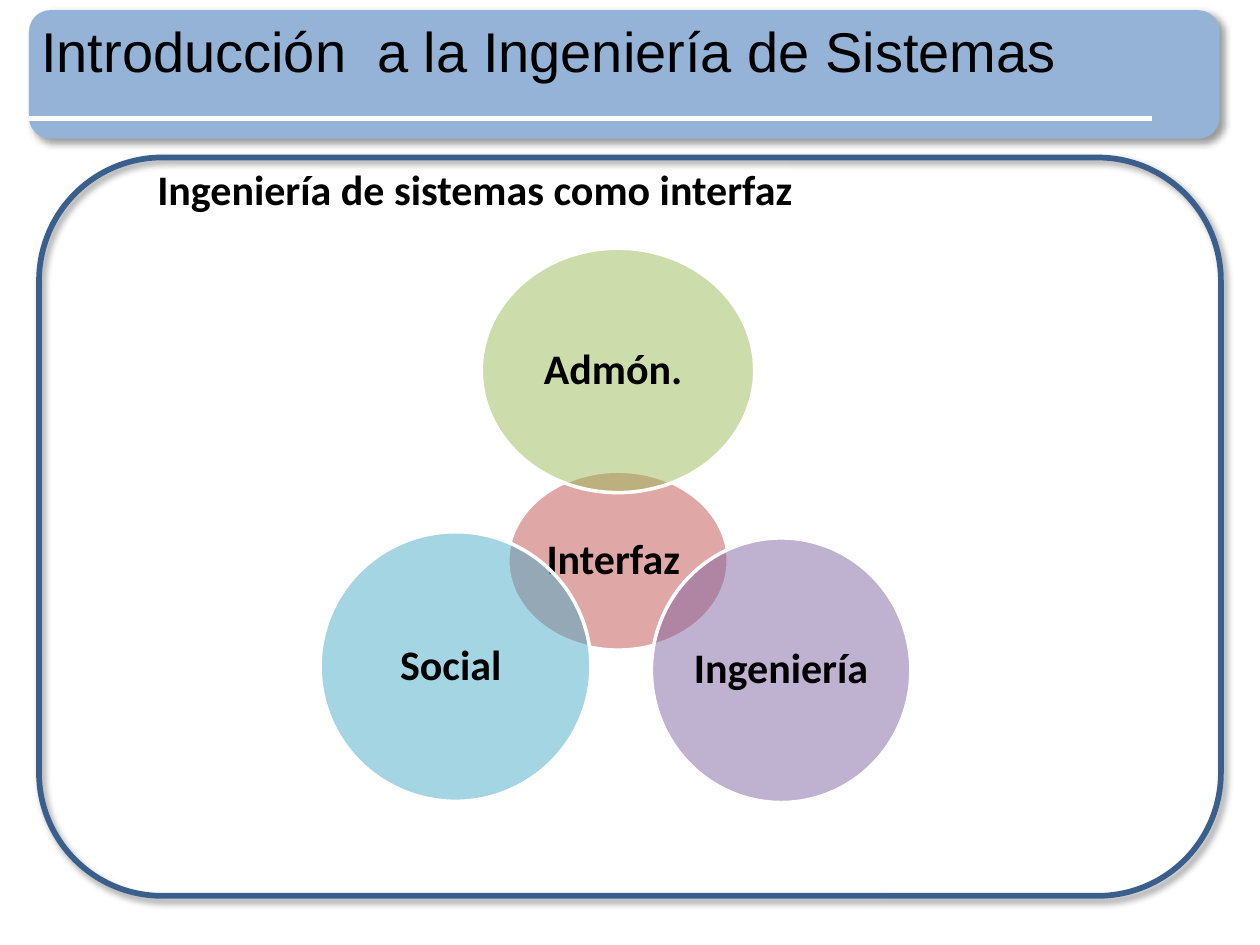
from lxml import etree
from pptx import Presentation
from pptx import util as u
from pptx.dml.color import RGBColor
from pptx.enum import shapes, text
from pptx.oxml import ns

BLACK = RGBColor(0x00, 0x00, 0x00)
WHITE = RGBColor(0xFF, 0xFF, 0xFF)
BAND = RGBColor(0x95, 0xB3, 0xD7)
EDGE = RGBColor(0x3A, 0x5F, 0x8C)
RED = RGBColor(0xC0, 0x50, 0x4D)
GREEN = RGBColor(0x9B, 0xBB, 0x59)
PURPLE = RGBColor(0x80, 0x64, 0xA2)
AQUA = RGBColor(0x4B, 0xAC, 0xC6)

deck = Presentation()
deck.slide_width, deck.slide_height = u.Inches(10), u.Inches(7.5)
slide = deck.slides.add_slide(deck.slide_layouts[6])
parts = slide.shapes


def area(*box):
    """Turn left, top, width, height in percent of the slide into lengths."""
    sides = (deck.slide_width, deck.slide_height) * 2
    return [round(share * side / 100) for share, side in zip(box, sides)]


def write(frame, words, size, face, bold, form):
    """Fill a text frame with one paragraph; form holds frame settings."""
    frame.word_wrap = True
    for key, val in form.items():
        setattr(frame, key, val)
    run = frame.paragraphs[0].add_run()
    run.text = words
    for key, val in {"size": u.Pt(size), "name": face, "bold": bold}.items():
        setattr(run.font, key, val)
    run.font.color.rgb = BLACK


# Title band and content frame, both with a soft shadow
for box, fill, edge in [
    ((2.3, 1.07, 94.5, 13.6), BAND, None),
    ((3.1, 16.67, 93.8, 78.13), None, EDGE),
]:
    panel = parts.add_shape(shapes.MSO_SHAPE.ROUNDED_RECTANGLE, *area(*box))
    if fill:
        panel.fill.solid()
        panel.fill.fore_color.rgb = fill
        panel.line.fill.background()
    else:
        panel.fill.background()
        panel.line.color.rgb = edge
        panel.line.width = u.Pt(3.25)
    panel.shadow.inherit = False
    glow = etree.SubElement(
        panel.element.spPr.find(ns.qn("a:effectLst")), ns.qn("a:outerShdw"),
        blurRad=str(u.Pt(4)), dist=str(u.Pt(3)), dir="2700000",
        algn="tl", rotWithShape="0")
    tint = etree.SubElement(glow, ns.qn("a:srgbClr"), val=str(BLACK))
    etree.SubElement(tint, ns.qn("a:alpha"), val="40000")

# White rule across the band
rule = parts.add_connector(shapes.MSO_CONNECTOR.STRAIGHT,
                           *area(2.3, 12.53, 91.4, 12.53))
rule.line.color.rgb = WHITE
rule.line.width = u.Pt(3.25)
etree.SubElement(rule.element.spPr, ns.qn("a:effectLst"))

# Headings
for box, words, size, face, bold in [
    ((11.5, 16.67, 85.4, 75.07), "Ingeniería de sistemas como interfaz",
     24, "Calibri", True),
    ((2.3, 1.07, 85.4, 13.6), "Introducción  a la Ingeniería de Sistemas",
     32, "Arial", False),
]:
    head = parts.add_textbox(*area(*box))
    write(head.text_frame, words, size, face, bold, {})

# Overlapping circles, the shared one at the back
inset = {f"margin_{side}": u.Inches(0.03)
         for side in ("left", "top", "right", "bottom")}
inset["vertical_anchor"] = text.MSO_ANCHOR.MIDDLE
for words, hue, box in [
    ("Interfaz ", RED, (40.3, 49.87, 17.5, 18.93)),
    ("Admón. ", GREEN, (38.2, 26.27, 21.7, 25.87)),
    ("Ingeniería", PURPLE, (51.7, 56.93, 20.6, 28)),
    ("Social ", AQUA, (25.4, 56.27, 21.5, 28.53)),
]:
    disc = parts.add_shape(shapes.MSO_SHAPE.OVAL, *area(*box))
    disc.shadow.inherit = False
    disc.fill.solid()
    disc.fill.fore_color.rgb = hue
    tint = disc.element.spPr.find(ns.qn("a:solidFill"))[0]
    etree.SubElement(tint, ns.qn("a:alpha"), val="50000")
    disc.line.color.rgb = WHITE
    disc.line.width = u.Pt(2)
    write(disc.text_frame, words, 24, "Calibri", True, inset)
    para = disc.text_frame.paragraphs[0]
    para.alignment = text.PP_ALIGN.CENTER
    para.line_spacing = 0.9

deck.save("out.pptx")
